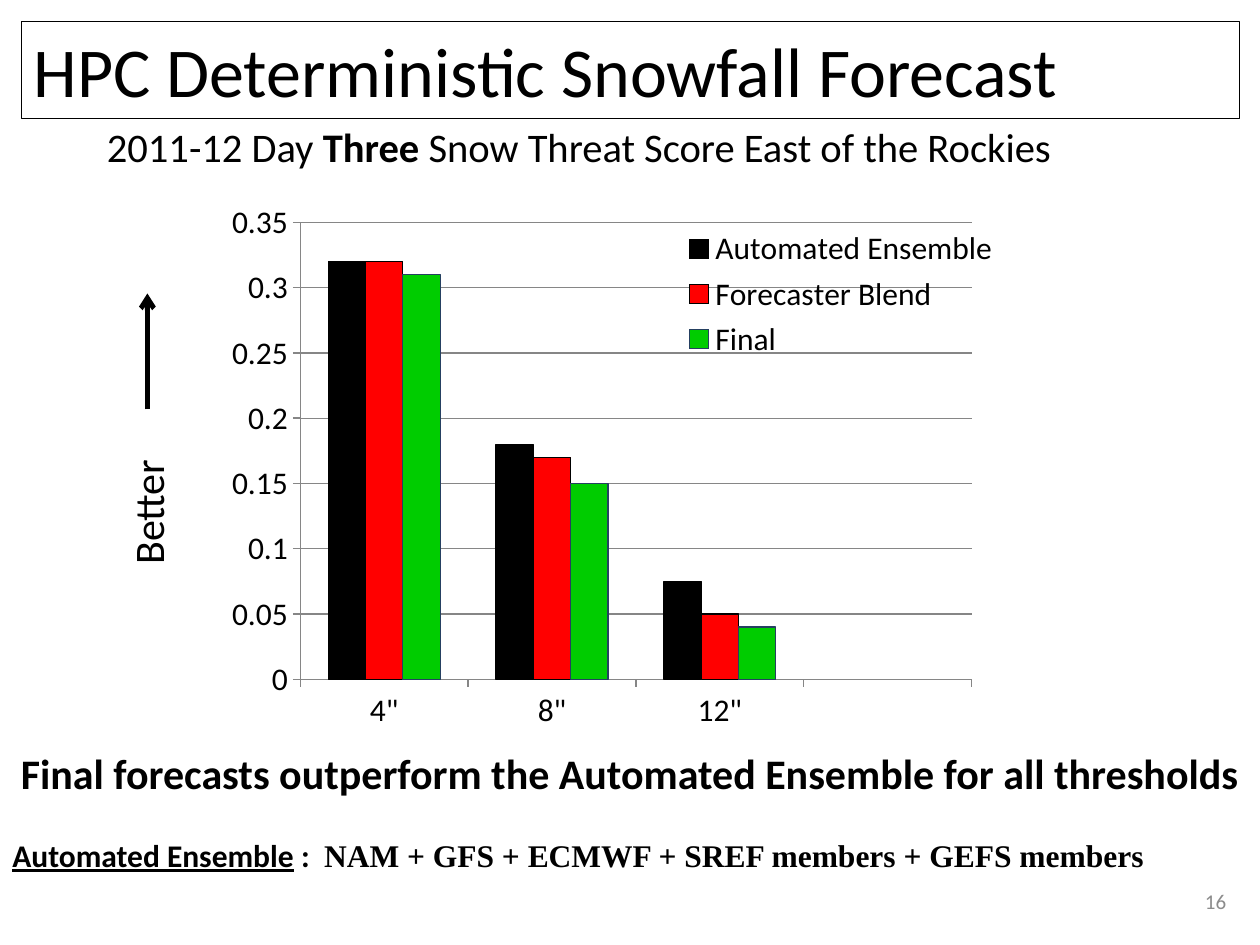
from lxml import etree
from pptx import Presentation
from pptx import util as u
from pptx.chart.data import CategoryChartData
from pptx.dml.color import RGBColor
from pptx.enum import chart as ch, shapes, text
from pptx.oxml import parse_xml
from pptx.oxml.ns import nsdecls, qn

deck = Presentation()
deck.slide_width, deck.slide_height = u.Inches(10), u.Inches(7.5)
slide = deck.slides.add_slide(deck.slide_layouts[6])
color = RGBColor.from_string


def share(left, top, width, height):
    """Percent of the slide's width and height to lengths."""
    return [int(deck.slide_width * left / 100), int(deck.slide_height * top / 100),
            int(deck.slide_width * width / 100), int(deck.slide_height * height / 100)]


def write(paragraph, pieces, size, ink="000000"):
    """Add (text, bold, underline, font) runs to a paragraph."""
    for words, bold, underline, face in pieces:
        run = paragraph.add_run()
        run.text = words
        run.font.size, run.font.name = u.Pt(size), face
        run.font.bold, run.font.underline = bold, underline
        run.font.color.rgb = color(ink)


# Title, subtitle, axis note and page number
labels = [
    ((1.7, 2.27, 96.7, 10.27), 40, "000000", [("HPC Deterministic Snowfall Forecast", False)]),
    ((7.5, 12.27, 87.5, 6.53), 23.2, "000000",
     [("2011-12 Day ", False), ("Three", True),
      (" Snow Threat Score East of the Rockies", False)]),
    ((3.8, 47.2, 15.8, 6.67), 24, "000000", [("Better", False)]),
    ((75, 92.67, 23.3, 5.33), 12, "8C8C8C", [("16", False)]),
]
boxes = []
for place, size, ink, pieces in labels:
    box = slide.shapes.add_textbox(*share(*place))
    box.text_frame.word_wrap = True
    write(box.text_frame.paragraphs[0],
          [(words, bold, False, "Calibri") for words, bold in pieces], size, ink)
    boxes.append(box)
title, subtitle, better, page = boxes
title.line.color.rgb = color("000000")
title.line.width = u.Pt(0.75)
better.rotation = 270
page.text_frame.vertical_anchor = text.MSO_ANCHOR.MIDDLE
page.text_frame.paragraphs[0].alignment = text.PP_ALIGN.RIGHT

# Threat scores; the fourth category is an empty slot
scores = CategoryChartData()
scores.categories = ['4"', '8"', '12"', ""]
bars = [("Automated Ensemble", (0.32, 0.18, 0.075, None), "000000", "000000"),
        ("Forecaster Blend", (0.32, 0.17, 0.05, None), "FF0000", "000000"),
        ("Final", (0.31, 0.15, 0.04, None), "00CC00", "254061")]
for name, values, _, _ in bars:
    scores.add_series(name, values)
chart = slide.shapes.add_chart(ch.XL_CHART_TYPE.COLUMN_CLUSTERED,
                               *share(18.3, 21.2, 69.2, 58.27), scores).chart
chart.has_title = False
chart.font.size, chart.font.name = u.Pt(18), "Calibri"
chart.font.color.rgb = color("000000")
plot = chart.plots[0]
plot.gap_width, plot.overlap, plot.vary_by_categories = 150, 0, False
for series, (_, _, fill, edge) in zip(plot.series, bars):
    series.format.fill.solid()
    series.format.fill.fore_color.rgb = color(fill)
    series.format.line.color.rgb = color(edge)
    series.format.line.width = u.Pt(0.75)

# Axes and gridlines
scale = chart.value_axis
scale.minimum_scale, scale.maximum_scale, scale.major_unit = 0, 0.35, 0.05
scale.tick_labels.number_format = "General"
scale.tick_labels.number_format_is_linked = False
scale.has_major_gridlines = True
for axis in (scale, chart.category_axis):
    axis.major_tick_mark = ch.XL_TICK_MARK.OUTSIDE
for rule in (scale, chart.category_axis, scale.major_gridlines):
    rule.format.line.color.rgb = color("868686")
    rule.format.line.width = u.Pt(0.75)

# Plot area and legend as shares of the chart
chart.has_legend = True
legend = chart.legend
legend.position = ch.XL_LEGEND_POSITION.RIGHT
legend.include_in_layout = False
area = chart.element.find(".//" + qn("c:plotArea"))
key = chart.element.find(".//" + qn("c:legend"))
for part, inner, frame in ((area, True, (0.08, 0.04, 0.77, 0.83)),
                           (key, False, (0.52, 0.04, 0.36, 0.26))):
    for old in part.findall(qn("c:layout")):
        part.remove(old)
    layout = parse_xml(f"<c:layout {nsdecls('c')}><c:manualLayout/></c:layout>")
    settings = [("layoutTarget", "inner")] if inner else []
    settings += [("xMode", "edge"), ("yMode", "edge"), *zip("xywh", frame)]
    for tag, value in settings:
        etree.SubElement(layout[0], qn("c:" + tag)).set("val", str(value))
    part.insert(0 if inner else 1, layout)

# Conclusion and definition
notes = slide.shapes.add_textbox(*share(0, 78.4, 100, 25.6)).text_frame
notes.word_wrap = True
conclusion, definition = notes.paragraphs[0], notes.add_paragraph()
conclusion.alignment = text.PP_ALIGN.CENTER
write(conclusion, [("Final forecasts outperform the Automated Ensemble for all thresholds",
                    True, False, "Calibri")], 24)
definition.space_before = u.Pt(22)
write(definition, [("Automated Ensemble", True, True, "Calibri"),
                   (" :  ", True, False, "Calibri"),
                   ("NAM + GFS + ECMWF + SREF members + GEFS members",
                    True, False, "Times New Roman")], 18)

# Arrow pointing to better scores
x, bottom, _, rise = share(11.7, 43.33, 0, 12.27)
arrow = slide.shapes.add_connector(shapes.MSO_CONNECTOR.STRAIGHT, x, bottom, x, bottom - rise)
arrow.line.color.rgb = color("000000")
arrow.line.width = u.Pt(2.75)
etree.SubElement(arrow.line._get_or_add_ln(), qn("a:tailEnd")).set("type", "arrow")
etree.SubElement(arrow._element.spPr, qn("a:effectLst"))

deck.save("out.pptx")
